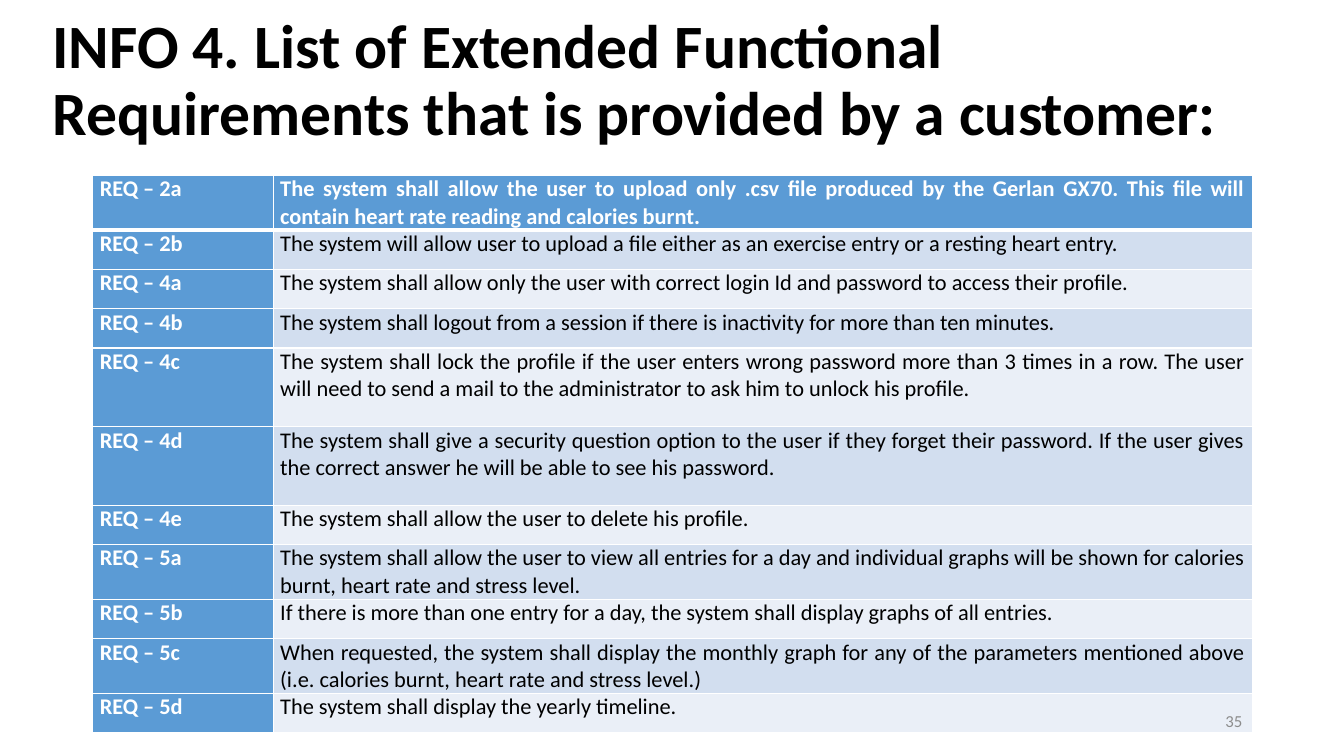
"""Build the slide listing the extended functional requirements."""
from lxml.etree import SubElement
from pptx import Presentation
from pptx.dml.color import RGBColor
from pptx.enum.text import MSO_ANCHOR, MSO_AUTO_SIZE, PP_ALIGN
from pptx.oxml.ns import qn
from pptx.util import Inches, Pt

COLOURS = {
    "black": "000000",
    "white": "FFFFFF",
    "blue": "5B9BD5",
    "dark band": "D2DEEF",
    "light band": "EAEFF7",
    "grey": "8C8C8C",
}

REQUIREMENTS = [
    ("2a", 0.39, "The system shall allow the user to upload only .csv file produced by the Gerlan GX70. "
     "This file will contain heart rate reading and calories burnt."),
    ("2b", 0.39, "The system will allow user to upload a file either as an exercise entry or a resting heart entry."),
    ("4a", 0.39, "The system shall allow only the user with correct login Id and password to access their profile."),
    ("4b", 0.39, "The system shall logout from a session if there is inactivity for more than ten minutes."),
    ("4c", 0.78, "The system shall lock the profile if the user enters wrong password more than 3 times in a row. "
     "The user will need to send a mail to the administrator to ask him to unlock his profile."),
    ("4d", 0.78, "The system shall give a security question option to the user if they forget their password. "
     "If the user gives the correct answer he will be able to see his password."),
    ("4e", 0.39, "The system shall allow the user to delete his profile."),
    ("5a", 0.39, "The system shall allow the user to view all entries for a day and individual graphs "
     "will be shown for calories burnt, heart rate and stress level."),
    ("5b", 0.39, "If there is more than one entry for a day, the system shall display graphs of all entries."),
    ("5c", 0.39, "When requested, the system shall display the monthly graph for any of the parameters "
     "mentioned above (i.e. calories burnt, heart rate and stress level.)"),
    ("5d", 0.39, "The system shall display the yearly timeline."),
]


def write(frame, text, size, colour, bold=False, align=PP_ALIGN.LEFT):
    """Put one formatted paragraph into a text frame and return it."""
    frame.text = text
    para = frame.paragraphs[0]
    para.alignment = align
    font = para.runs[0].font
    font.name = "Calibri"
    font.size = Pt(size)
    font.bold = bold
    font.color.rgb = RGBColor.from_string(COLOURS[colour])
    return para


def add_border(cell, side, width):
    """Draw a white line along one side of a table cell."""
    line = SubElement(cell._tc.get_or_add_tcPr(), qn(f"a:ln{side}"), w=str(Pt(width)))
    fill = SubElement(line, qn("a:solidFill"))
    SubElement(fill, qn("a:srgbClr"), val=COLOURS["white"])


deck = Presentation()
deck.slide_width = Inches(13.33)
deck.slide_height = Inches(7.5)
page = deck.slides.add_slide(deck.slide_layouts[5])

title = page.shapes.title
title.left, title.top = Inches(0.42), Inches(0.09)
title.width, title.height = Inches(11.87), Inches(1.45)
title.text_frame.auto_size = MSO_AUTO_SIZE.NONE
title.text_frame.vertical_anchor = MSO_ANCHOR.MIDDLE
heading = write(title.text_frame,
                "INFO 4. List of Extended Functional Requirements that is provided by a customer:",
                44, "black", bold=True)
heading.line_spacing = 0.9

table = page.shapes.add_table(len(REQUIREMENTS), 2, Inches(0.92), Inches(1.74),
                              Inches(11.5), Inches(5.07)).table
table.first_col = True
table.columns[0].width = Inches(1.79)
table.columns[1].width = Inches(9.71)

for index, (number, height, requirement) in enumerate(REQUIREMENTS):
    table.rows[index].height = Inches(height)
    label_cell, text_cell = table.cell(index, 0), table.cell(index, 1)
    is_header = index == 0
    band = "blue" if is_header else "dark band" if index % 2 else "light band"
    write(label_cell.text_frame, f"REQ – {number}", 16, "white", bold=True)
    write(text_cell.text_frame, requirement, 16, "white" if is_header else "black",
          bold=is_header, align=PP_ALIGN.JUSTIFY)
    for cell, colour in ((label_cell, "blue"), (text_cell, band)):
        cell.margin_left = cell.margin_right = Inches(0.07)
        cell.margin_top = cell.margin_bottom = 0
        for side in "LRTB":
            below_header = (index, side) in ((0, "B"), (1, "T"))
            add_border(cell, side, 3 if below_header else 1)
        cell.fill.solid()
        cell.fill.fore_color.rgb = RGBColor.from_string(COLOURS[colour])

number_box = page.shapes.add_textbox(Inches(9.42), Inches(6.95), Inches(3), Inches(0.4))
number_box.text_frame.word_wrap = True
number_box.text_frame.vertical_anchor = MSO_ANCHOR.MIDDLE
write(number_box.text_frame, "35", 12, "grey", align=PP_ALIGN.RIGHT)

deck.save("out.pptx")
